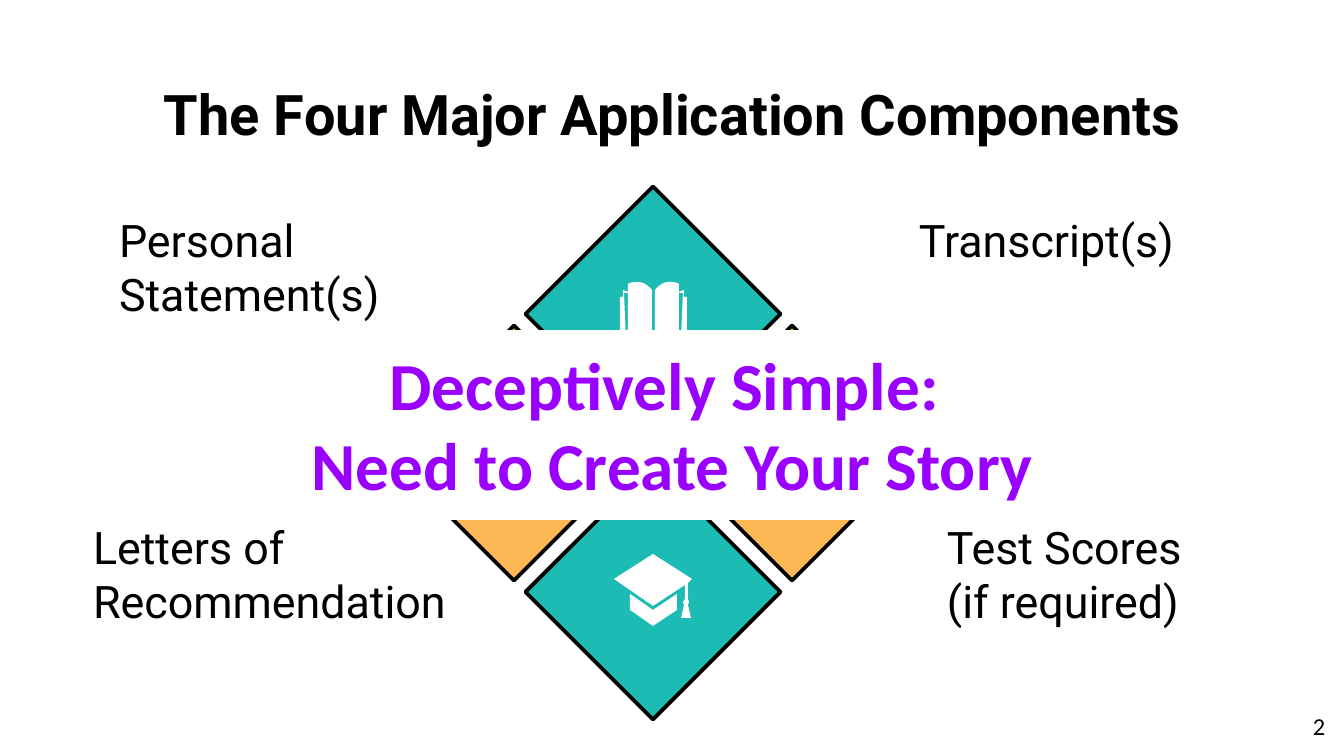
from pptx import Presentation
from pptx.dml.color import RGBColor
from pptx.enum.shapes import MSO_SHAPE
from pptx.enum.text import MSO_ANCHOR, PP_ALIGN
from pptx.util import Emu, Pt

DIAMOND, RECT = MSO_SHAPE.DIAMOND, MSO_SHAPE.RECTANGLE
LEFT, CENTER, RIGHT = PP_ALIGN.LEFT, PP_ALIGN.CENTER, PP_ALIGN.RIGHT
TOP, MIDDLE = MSO_ANCHOR.TOP, MSO_ANCHOR.MIDDLE

SCALE = 914400 / 134.4  # EMU per px
WIDTH, HEIGHT = 1344, 756
INSET = 13
TEAL, ORANGE, PURPLE, WHITE, BLACK = "1CBBB4", "FEB856", "9900FF", "FFFFFF", "000000"

TITLE = "The Four Major Application Components"
TITLE_BOX = (93, 40, 1159, 147)
COMPONENTS = [  # lines, box
    (["Personal", "Statement(s)"], (106, 200, 290, 136)),
    (["Letters of", "Recommendation"], (80, 507, 390, 136)),
    (["Transcript(s)"], (906, 200, 347, 82)),
    (["Test Scores", "(if required)"], (934, 507, 290, 136)),
]
BANNER = ["Deceptively Simple: ", "Need to Create Your Story"]
BANNER_BOX = (272, 330, 800, 190)
PAGE_NUMBER = "2"
PAGE_BOX = (1257, 698, 81, 58)

HUB = (653, 453)
DIAMOND_SIZE, DIAMOND_OFFSET = 255, 139
DIAMONDS = [(0, -1, TEAL), (0, 1, TEAL), (1, 0, ORANGE), (-1, 0, ORANGE)]

# Two numbers are a line's end; six are a curve's two controls and end.
BOOK_AXIS = 653.5
BOOK_RIGHT = [
    (655, 340), (665, 337, 671, 335, 681, 339), (683, 293), (679, 293), (679, 333),
    (671, 331, 663, 333, 655, 340), (655, 290), (659, 285, 664, 282, 669, 282),
    (672, 282, 676, 282, 679, 284), (679, 292), (684, 290), (684, 297), (687, 297),
    (687, 345), (653.5, 345),
]
CAP_BASE = [(630, 594), (653, 610), (677, 594), (677, 610), (653, 626), (630, 610)]
CAP_TOP = [
    (653, 554), (692, 579), (688, 583), (688, 599), (689, 602), (688, 605),
    (691, 618), (681, 618), (684, 605), (683, 602), (685, 599), (685, 585),
    (653, 606), (614, 579),
]


def px(n):
    return Emu(round(n * SCALE))


def rgb(color):
    return RGBColor.from_string(color)


def paint(s, fill, line=None):
    s.shadow.inherit = False
    s.fill.solid()
    s.fill.fore_color.rgb = rgb(fill)
    if line:
        s.line.color.rgb = rgb(line)
        s.line.width = Pt(2)
    else:
        s.line.fill.background()


def write(s, lines, size, font="Roboto", color=BLACK, bold=False, align=LEFT, anchor=TOP, inset_y=INSET):
    tf = s.text_frame
    tf.word_wrap = True
    tf.vertical_anchor = anchor
    tf.margin_left = tf.margin_right = px(INSET)
    tf.margin_top = tf.margin_bottom = px(inset_y)
    for i, line in enumerate(lines):
        p = tf.add_paragraph() if i else tf.paragraphs[0]
        p.alignment = align
        r = p.add_run()
        r.text = line
        r.font.name, r.font.size, r.font.bold = font, Pt(size), bold
        r.font.color.rgb = rgb(color)


def flatten(segments, steps=8):
    """Turn lines and cubic curves into a list of points."""
    points = []
    for seg in segments:
        if len(seg) == 2:
            points.append(seg)
            continue
        x0, y0 = points[-1]
        x1, y1, x2, y2, x3, y3 = seg
        for t in (k / steps for k in range(1, steps + 1)):
            a, b, c, d = (1 - t) ** 3, 3 * t * (1 - t) ** 2, 3 * t * t * (1 - t), t ** 3
            points.append((a * x0 + b * x1 + c * x2 + d * x3,
                           a * y0 + b * y1 + c * y2 + d * y3))
    return points


def add_icon(shapes, contours):
    builder = shapes.build_freeform(*contours[0][0], scale=SCALE / 10)
    for contour in contours:
        points = [(round(x * 10), round(y * 10)) for x, y in contour]
        builder.move_to(*points[0])
        builder.add_line_segments(points[1:], close=True)
    paint(builder.convert_to_shape(), WHITE)


def main():
    prs = Presentation()
    prs.slide_width, prs.slide_height = px(WIDTH), px(HEIGHT)
    slide = prs.slides.add_slide(prs.slide_layouts[5])
    shapes = slide.shapes

    title = shapes.title
    title.left, title.top, title.width, title.height = map(px, TITLE_BOX)
    write(title, [TITLE], 30, bold=True, align=CENTER, anchor=MIDDLE, inset_y=7)

    for dx, dy, color in DIAMONDS:
        left = HUB[0] + dx * DIAMOND_OFFSET - DIAMOND_SIZE / 2
        top = HUB[1] + dy * DIAMOND_OFFSET - DIAMOND_SIZE / 2
        s = shapes.add_shape(DIAMOND, px(left), px(top), px(DIAMOND_SIZE), px(DIAMOND_SIZE))
        paint(s, color, BLACK)

    page = flatten(BOOK_RIGHT)
    add_icon(shapes, [page, [(2 * BOOK_AXIS - x, y) for x, y in page]])
    add_icon(shapes, [CAP_BASE, CAP_TOP])

    for lines, box in COMPONENTS:
        write(shapes.add_textbox(*map(px, box)), lines, 24)

    banner = shapes.add_shape(RECT, *map(px, BANNER_BOX))
    paint(banner, WHITE)
    write(banner, BANNER, 36, "Calibri", PURPLE, bold=True, align=CENTER)

    write(shapes.add_textbox(*map(px, PAGE_BOX)), [PAGE_NUMBER], 13, "Calibri", align=RIGHT)
    prs.save("out.pptx")


if __name__ == "__main__":
    main()
